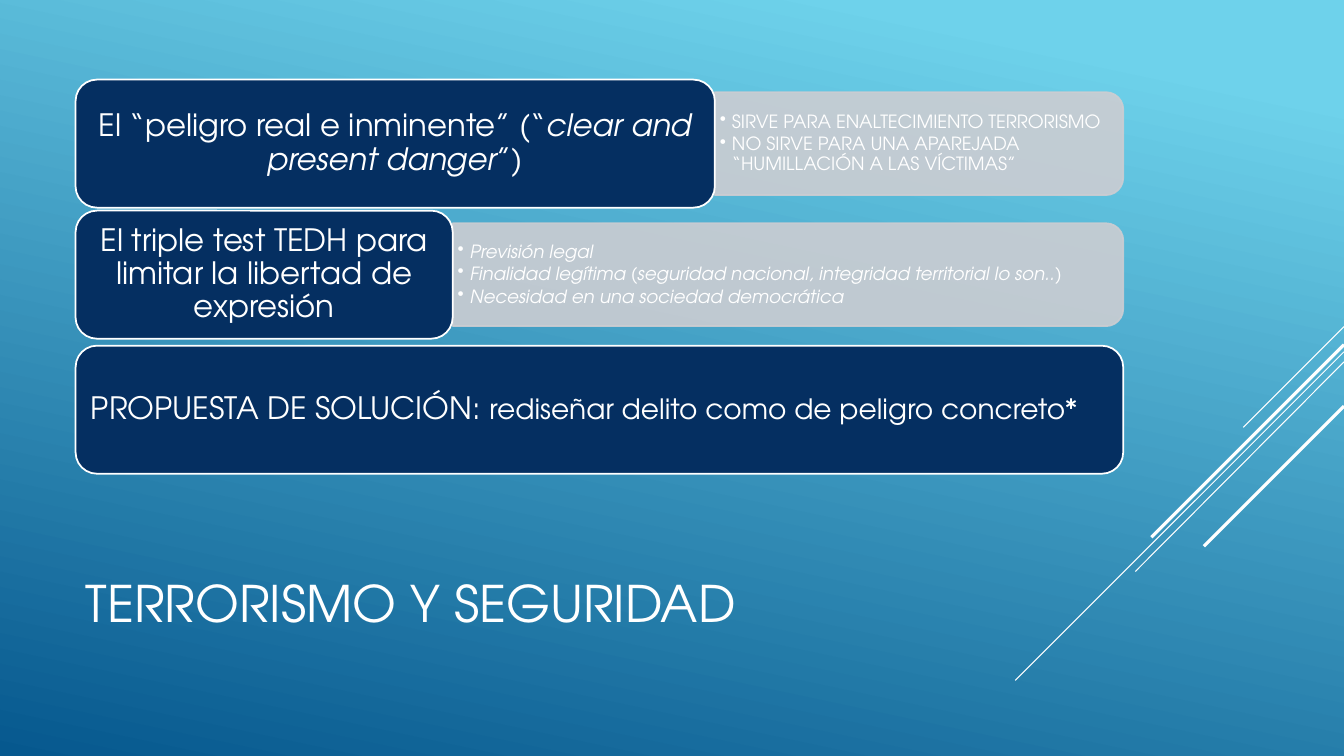
from lxml import etree
from pptx import Presentation
from pptx.dml.color import RGBColor
from pptx.enum.shapes import MSO_CONNECTOR, MSO_SHAPE
from pptx.enum.text import MSO_ANCHOR, MSO_AUTO_SIZE, PP_ALIGN
from pptx.oxml.ns import qn
from pptx.util import Inches, Pt

ROUNDED = MSO_SHAPE.ROUNDED_RECTANGLE
TWO_ROUNDED = MSO_SHAPE.ROUND_2_SAME_RECTANGLE
STRAIGHT = MSO_CONNECTOR.STRAIGHT
MIDDLE, BOTTOM = MSO_ANCHOR.MIDDLE, MSO_ANCHOR.BOTTOM
LEFT, CENTER = PP_ALIGN.LEFT, PP_ALIGN.CENTER
NO_AUTOFIT = MSO_AUTO_SIZE.NONE

WHITE = RGBColor(0xFF, 0xFF, 0xFF)
NAVY = RGBColor(0x05, 0x2F, 0x61)
GREY = RGBColor(0xCC, 0xCD, 0xD2)
SKY = RGBColor(0x6E, 0xD2, 0xEB)
OCEAN = RGBColor(0x06, 0x58, 0x8E)
FONT = "TeX Gyre Adventor"

SLIDE_WIDTH = 13.33
ROW_LEFT = 0.75
ROW_RIGHT = 11.14
ROW_HEIGHT = 1.27
PANEL_HEIGHT = 1.02
PANEL_TEXT_HEIGHT = 0.92
BULLET_INDENT = 0.12

RAYS = [
    (3.24, 12.33, 4.24, 0.75),
    (3.49, 10.07, 6.75, 0.75),
    (3.59, 11.26, 5.67, 0.75),
    (3.42, 11.42, 5.33, 2.25),
    (4.03, 11.94, 5.42, 2.25),
]


def set_background(page):
    fill = page.background.fill
    fill.gradient()
    fill.gradient_angle = 258
    for stop, position, color in zip(fill.gradient_stops, (0.1, 1), (SKY, OCEAN)):
        stop.position = position
        stop.color.rgb = color


def set_font(font, size, italic=None):
    font.name = FONT
    font.size = Pt(size)
    font.italic = italic
    font.color.rgb = WHITE


def set_frame(frame, anchor, side, edge):
    frame.word_wrap = True
    frame.auto_size = NO_AUTOFIT
    frame.vertical_anchor = anchor
    frame.margin_left = frame.margin_right = Inches(side)
    frame.margin_top = frame.margin_bottom = Inches(edge)


def add_ray(page, top, end_left, end_top, weight):
    ray = page.shapes.add_connector(
        STRAIGHT, Inches(SLIDE_WIDTH), Inches(top), Inches(end_left), Inches(end_top))
    ray.line.color.rgb = WHITE
    ray.line.width = Pt(weight)
    etree.SubElement(ray.element.spPr, qn("a:effectLst"))


def add_block(page, kind, place, fill_color, line_color):
    block = page.shapes.add_shape(kind, *[Inches(length) for length in place])
    block.shadow.inherit = False
    block.fill.solid()
    block.fill.fore_color.rgb = fill_color
    block.line.color.rgb = line_color
    block.line.width = Pt(1.25)
    return block


def add_heading(page, top, width, spans, alignment=CENTER):
    box = add_block(page, ROUNDED, (ROW_LEFT, top, width, ROW_HEIGHT), NAVY, WHITE)
    set_frame(box.text_frame, MIDDLE, 0.09, 0.05)
    para = box.text_frame.paragraphs[0]
    para.alignment = alignment
    para.line_spacing = 0.9
    for text, size, italic in spans:
        span = para.add_run()
        span.text = text
        set_font(span.font, size, italic)


def add_panel(page, row_top, left, lines, italic=False):
    middle = row_top + ROW_HEIGHT / 2
    length = ROW_RIGHT - left
    place = ((left + ROW_RIGHT - PANEL_HEIGHT) / 2, middle - length / 2,
             PANEL_HEIGHT, length)
    panel = add_block(page, TWO_ROUNDED, place, GREY, GREY)
    panel.rotation = 90
    for color in panel.element.spPr.iter(qn("a:srgbClr")):
        etree.SubElement(color, qn("a:alpha"), val="90000")

    box = page.shapes.add_textbox(
        Inches(left), Inches(middle - PANEL_TEXT_HEIGHT / 2),
        Inches(length - 0.05), Inches(PANEL_TEXT_HEIGHT))
    frame = box.text_frame
    set_frame(frame, MIDDLE, 0.05, 0.03)
    for index, line in enumerate(lines):
        para = frame.add_paragraph() if index else frame.paragraphs[0]
        para.text = line
        para.level = 1
        para.line_spacing = 0.9
        para.space_after = Pt(2)
        set_font(para.font, 13, italic)
        add_bullet(para)


def add_bullet(para):
    properties = para._p.get_or_add_pPr()
    properties.set("marL", str(Inches(BULLET_INDENT)))
    properties.set("indent", str(-Inches(BULLET_INDENT)))
    bullet = etree.Element(qn("a:buChar"), char="•")
    properties.find(qn("a:defRPr")).addprevious(bullet)


def set_title(page, text):
    title = page.shapes.title
    title.left, title.top = Inches(0.75), Inches(4.91)
    title.width, title.height = Inches(9.33), Inches(1.65)
    frame = title.text_frame
    set_frame(frame, BOTTOM, 0.1, 0.05)
    frame.margin_bottom = Inches(0.28)
    para = frame.paragraphs[0]
    para.text = text
    para.alignment = LEFT
    para.line_spacing = 0.9
    set_font(para.font, 36)


def main():
    deck = Presentation()
    deck.slide_width = Inches(SLIDE_WIDTH)
    deck.slide_height = Inches(7.5)
    page = deck.slides.add_slide(deck.slide_layouts[5])
    set_background(page)
    for ray in RAYS:
        add_ray(page, *ray)
    set_title(page, "TERRORISMO Y SEGURIDAD")

    add_panel(page, 0.79, 7.09, [
        "SIRVE PARA ENALTECIMIENTO TERRORISMO",
        "NO SIRVE PARA UNA APAREJADA “HUMILLACIÓN A LAS VÍCTIMAS”",
    ])
    add_heading(page, 0.79, 6.34, [
        ("El “peligro real e inminente” (“", 22, False),
        ("clear and present danger", 22, True),
        ("”)", 22, False),
    ])
    add_panel(page, 2.09, 4.49, [
        "Previsión legal",
        "Finalidad legítima (seguridad nacional, integridad territorial lo son..)",
        "Necesidad en una sociedad democrática",
    ], italic=True)
    add_heading(page, 2.09, 3.74, [
        ("El triple test TEDH para limitar la libertad de expresión", 22, False),
    ])
    add_heading(page, 3.43, ROW_RIGHT - ROW_LEFT, [
        ("PROPUESTA DE SOLUCIÓN: ", 22, False),
        ("rediseñar delito como de peligro concreto*", 20, False),
    ], LEFT)
    deck.save("out.pptx")


if __name__ == "__main__":
    main()
